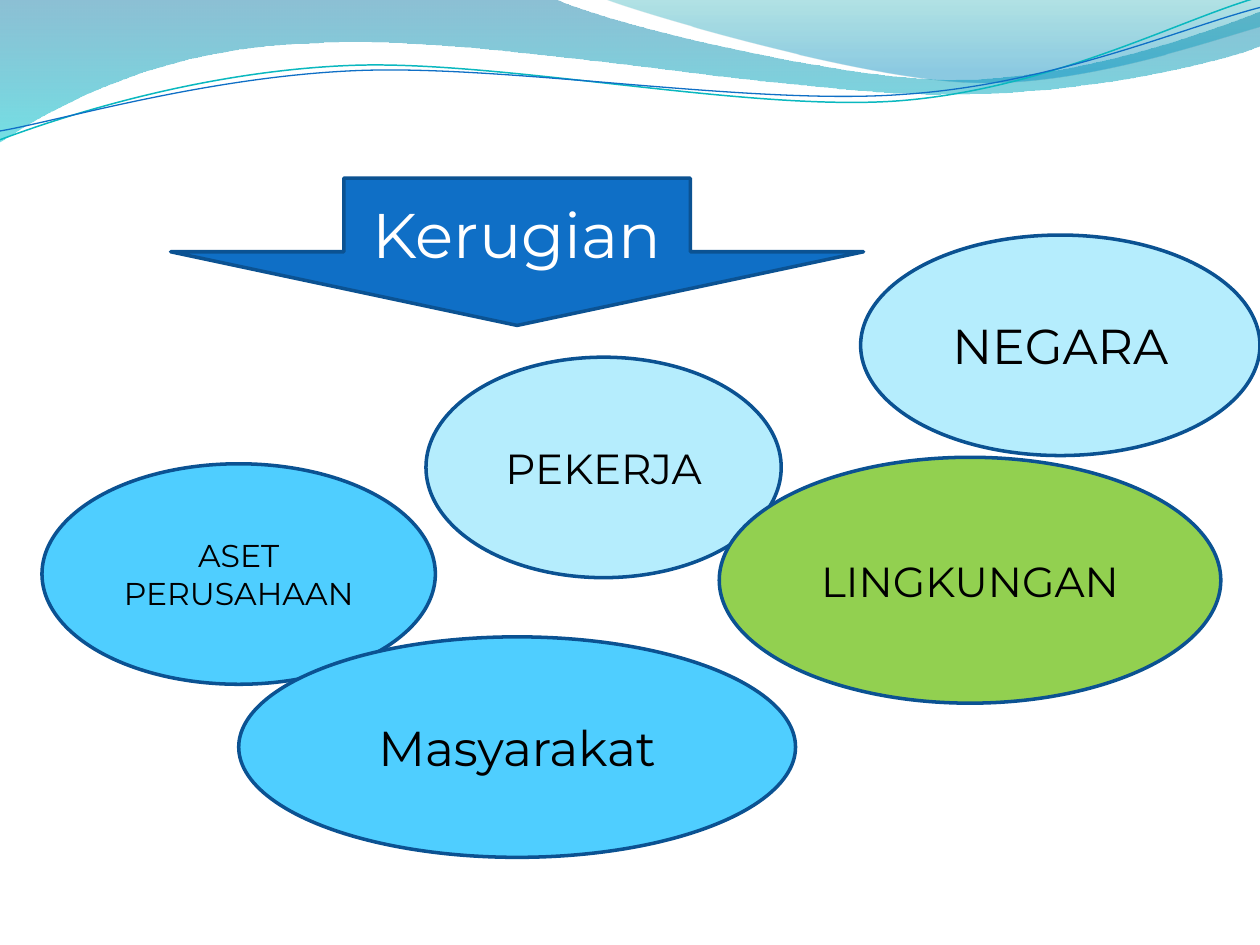
from lxml import etree
from pptx import Presentation
from pptx.dml.color import RGBColor
from pptx.enum import shapes, text
from pptx.oxml.ns import qn
from pptx.util import Pt


def rgb(hex_color):
    return RGBColor.from_string(hex_color)


def add_wave(sps, start, segments, close):
    """Draw segments of 2 numbers (line) or 6 (Bezier curve) as one freeform."""
    points = [(Pt(x), Pt(y)) for seg in segments for x, y in zip(seg[::2], seg[1::2])]
    fb = sps.build_freeform(Pt(start[0]), Pt(start[1]), scale=1.0)
    fb.add_line_segments(points, close=close)
    sp = fb.convert_to_shape()
    sp.shadow.inherit = False
    # Turn the three line steps of each curve into one cubic Bezier step
    steps = iter(list(sp._element.iter(qn("a:lnTo"))))
    for seg in segments:
        first = next(steps)
        if len(seg) == 6:
            first.tag = qn("a:cubicBezTo")
            for step in (next(steps), next(steps)):
                first.append(step[0])
                step.getparent().remove(step)
    return sp


prs = Presentation()
prs.slide_width, prs.slide_height = Pt(720), Pt(540)
slide = prs.slides.add_slide(prs.slide_layouts[6])
sps = slide.shapes

# Translucent waves: start, segments, gradient stops (position, colour, opacity %)
bands = [
    ((0, 0),
     [(316.8, -0.7),
      (342.7, 12.2, 478.1, 45.4, 545.8, 45.4),
      (614.2, 45.4, 689.8, 18.7, 720, 6.5),
      (720.7, 25.9),
      (709.8, 31.7, 626.4, 54.7, 537.1, 54),
      (447.8, 54, 275, 20.2, 185, 24.5),
      (92.9, 25.9, 33.1, 59.8, -0.7, 81.4),
      (0, 0)],
     [(0, "0074A1", 45), (1, "00C6CF", 55)]),
    ((344.9, -0.7),
     [(366.5, 7.9, 491, 44.6, 553.7, 46.8),
      (616.3, 49.7, 691.9, 23, 720, 15.1),
      (720, 0),
      (344.9, -0.7)],
     [(0, "00A1A9", 30), (0.8, "008BBF", 45)]),
]
for start, segments, stops in bands:
    sp = add_wave(sps, start, segments, close=True)
    sp.line.fill.background()
    sp.fill.gradient()
    sp.fill.gradient_angle = 270
    for stop, (position, color, _) in zip(sp.fill.gradient_stops, stops):
        stop.position = position
        stop.color.rgb = rgb(color)
    colors = sp._element.spPr.find(qn("a:gradFill")).iter(qn("a:srgbClr"))
    for clr, (_, _, opacity) in zip(list(colors), stops):
        etree.SubElement(clr, qn("a:alpha")).set("val", str(opacity * 1000))

# Thin wave lines, tilted after drawing: start, curves, colour, width
wave_lines = [
    ((-1.4, 62.9),
     [(33.7, 51.6, 114, 29.4, 199.8, 29.9),
      (284.8, 30.3, 425.8, 67.2, 512.4, 64.9),
      (599, 62.4, 676.4, 25.7, 720.2, 15.6)],
     "0AB8BF", 0.85),
    ((-1.2, 57.9),
     [(33, 53.7, 118.3, 32.5, 204, 33),
      (290.5, 33.5, 428.9, 63.8, 515.5, 61.3),
      (601.4, 59.7, 678.5, 30.1, 721.4, 21.3)],
     "0F6FC6", 0.75),
]
line_group = sps.add_group_shape()
for start, curves, color, width in wave_lines:
    sp = add_wave(line_group.shapes, start, curves, close=False)
    sp.rotation = 357.3
    sp.fill.background()
    sp.line.color.rgb = rgb(color)
    sp.line.width = Pt(width)

# Heading arrow and the parties that bear the loss
ARROW, OVAL = shapes.MSO_SHAPE.DOWN_ARROW, shapes.MSO_SHAPE.OVAL
labels = [
    (ARROW, "Kerugian", (97.5, 101.8, 396, 84.2), "0F6FC6", 36, "FFFFFF"),
    (OVAL, "ASET PERUSAHAAN", (24, 265, 224.8, 126), "4FCEFF", 18, "000000"),
    (OVAL, "PEKERJA", (243.4, 204.1, 203, 126), "B5EDFD", 24, "000000"),
    (OVAL, "LINGKUNGAN", (411, 261.3, 286.6, 140.5), "92D050", 24, "000000"),
    (OVAL, "Masyarakat", (136.4, 363.9, 318.2, 126), "4FCEFF", 28, "000000"),
    (OVAL, "NEGARA", (491.8, 134.3, 228.2, 126), "B5EDFD", 28, "000000"),
]
for kind, label, box, fill, size, color in labels:
    sp = sps.add_shape(kind, *(Pt(v) for v in box))
    sp.shadow.inherit = False
    sp.fill.solid()
    sp.fill.fore_color.rgb = rgb(fill)
    sp.line.color.rgb = rgb("0B5292")
    sp.line.width = Pt(2)
    tf = sp.text_frame
    tf.word_wrap = True
    tf.vertical_anchor = text.MSO_ANCHOR.MIDDLE
    p = tf.paragraphs[0]
    p.text = label
    p.alignment = text.PP_ALIGN.CENTER
    p.font.name = "Montserrat"
    p.font.size = Pt(size)
    p.font.color.rgb = rgb(color)

prs.save("out.pptx")
